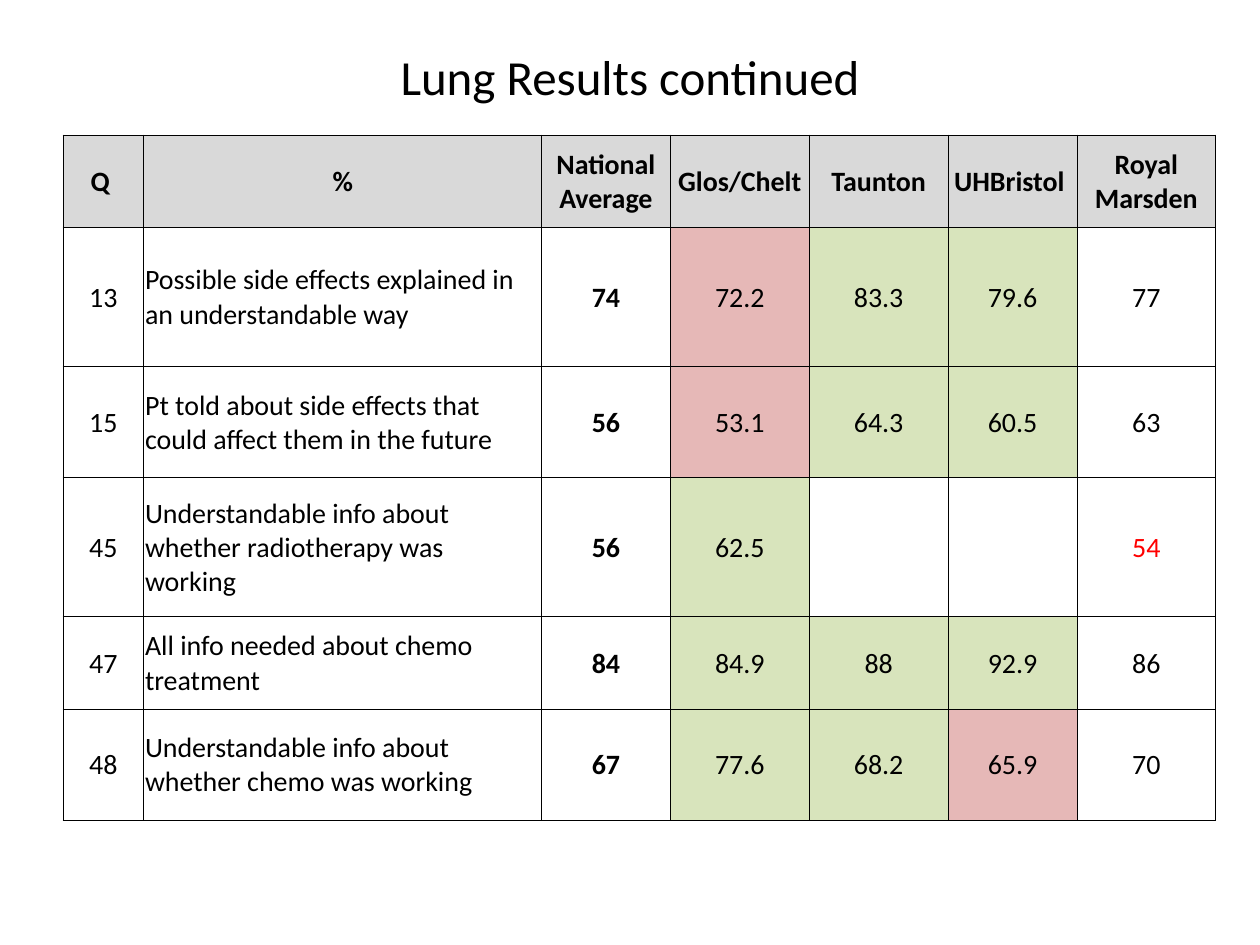
from lxml import etree
from pptx import Presentation
from pptx import util as u
from pptx.dml import color
from pptx.enum import text
from pptx.oxml import ns

# Content
TITLE = "Lung Results continued"
HEADERS = ["Q ", "%", "National Average", "Glos/Chelt", "Taunton",
           "UHBristol ", "Royal Marsden"]
RESULTS = [
    (13, "Possible side effects explained in an understandable way",
     74, 72.2, 83.3, 79.6, 77),
    (15, "Pt told about side effects that could affect them in the future",
     56, 53.1, 64.3, 60.5, 63),
    (45, "Understandable info about whether radiotherapy was working",
     56, 62.5, None, None, 54),
    (47, "All info needed about chemo treatment",
     84, 84.9, 88, 92.9, 86),
    (48, "Understandable info about whether chemo was working",
     67, 77.6, 68.2, 65.9, 70),
]
QUESTION, AVERAGE, MARSDEN = 1, 2, 6

THEME = {
    "font": "Calibri", "title_size": 28, "table_size": 16,
    "ink": "000000", "alert": "FF0000", "header": "D9D9D9",
    "below": "E6B8B7", "above": "D8E4BC", "border": "000000", "border_width": 0.5,
}

# Layout: shares of the slide, then weights of the table grid
SLIDE_WIDTH, SLIDE_HEIGHT = u.Inches(10), u.Inches(7.5)
TITLE_AREA = (0.05, 0.04, 0.9, 0.08)
TABLE_AREA = (0.05, 0.143, 0.915, 0.725)
COLUMNS = [0.64, 3.15, 1.02, 1.1, 1.1, 1.02, 1.1]
ROWS = [0.73, 1.1, 0.88, 1.1, 0.73, 0.88]
TITLE_MARGINS = {"margin_left": u.Inches(0.1), "margin_right": u.Inches(0.1),
                 "margin_top": u.Inches(0.05), "margin_bottom": u.Inches(0.05)}
CELL_MARGINS = {"margin_left": u.Inches(0.01), "margin_right": u.Inches(0.01),
                "margin_top": u.Inches(0.01), "margin_bottom": 0}


def area(left, top, width, height):
    return (int(left * SLIDE_WIDTH), int(top * SLIDE_HEIGHT),
            int(width * SLIDE_WIDTH), int(height * SLIDE_HEIGHT))


def set_all(target, values):
    for name, value in values.items():
        setattr(target, name, value)


def write(frame, words, size, align, ink=THEME["ink"], bold=False):
    para = frame.paragraphs[0]
    para.alignment = align
    span = para.add_run()
    span.text = words
    set_all(span.font, {"name": THEME["font"], "size": u.Pt(size), "bold": bold})
    span.font.color.rgb = color.RGBColor.from_string(ink)


def share_out(tracks, weights, total, side):
    for track, weight in zip(tracks, weights):
        setattr(track, side, int(total * weight / sum(weights)))


def add_borders(cell):
    properties = cell._tc.get_or_add_tcPr()
    for place, edge in enumerate(("lnL", "lnR", "lnT", "lnB")):
        line = etree.Element(ns.qn(f"a:{edge}"), w=str(u.Pt(THEME["border_width"])))
        fill = etree.SubElement(line, ns.qn("a:solidFill"))
        etree.SubElement(fill, ns.qn("a:srgbClr"), val=THEME["border"])
        properties.insert(place, line)


def cell_colours(row, column, value, average):
    """Return fill and ink: hospitals are rated against the national average."""
    fill, ink = None, THEME["ink"]
    if row == 0:
        fill = THEME["header"]
    elif column > AVERAGE and value is not None:
        below = value < average
        if column == MARSDEN:
            ink = THEME["alert"] if below else ink
        else:
            fill = THEME["below" if below else "above"]
    return fill, ink


def add_title(page):
    box = page.shapes.add_textbox(*area(*TITLE_AREA))
    set_all(box.text_frame, {"word_wrap": True,
                             "vertical_anchor": text.MSO_ANCHOR.MIDDLE,
                             **TITLE_MARGINS})
    write(box.text_frame, TITLE, THEME["title_size"], text.PP_ALIGN.CENTER)


def add_results(page):
    left, top, width, height = area(*TABLE_AREA)
    table = page.shapes.add_table(len(ROWS), len(COLUMNS),
                                  left, top, width, height).table
    set_all(table, {"first_row": False, "horz_banding": False})
    share_out(table.columns, COLUMNS, width, "width")
    share_out(table.rows, ROWS, height, "height")

    for row, values in enumerate([HEADERS, *RESULTS]):
        for column, value in enumerate(values):
            cell = table.cell(row, column)
            set_all(cell, {"vertical_anchor": text.MSO_ANCHOR.MIDDLE, **CELL_MARGINS})
            fill, ink = cell_colours(row, column, value, values[AVERAGE])
            if fill:
                cell.fill.solid()
                cell.fill.fore_color.rgb = color.RGBColor.from_string(fill)
            else:
                cell.fill.background()
            add_borders(cell)
            if value is not None:
                is_question = row > 0 and column == QUESTION
                align = text.PP_ALIGN.LEFT if is_question else text.PP_ALIGN.CENTER
                write(cell.text_frame, str(value), THEME["table_size"], align, ink,
                      bold=row == 0 or column == AVERAGE)


def main():
    deck = Presentation()
    set_all(deck, {"slide_width": SLIDE_WIDTH, "slide_height": SLIDE_HEIGHT})
    page = deck.slides.add_slide(deck.slide_layouts[6])
    add_title(page)
    add_results(page)
    deck.save("out.pptx")


if __name__ == "__main__":
    main()
